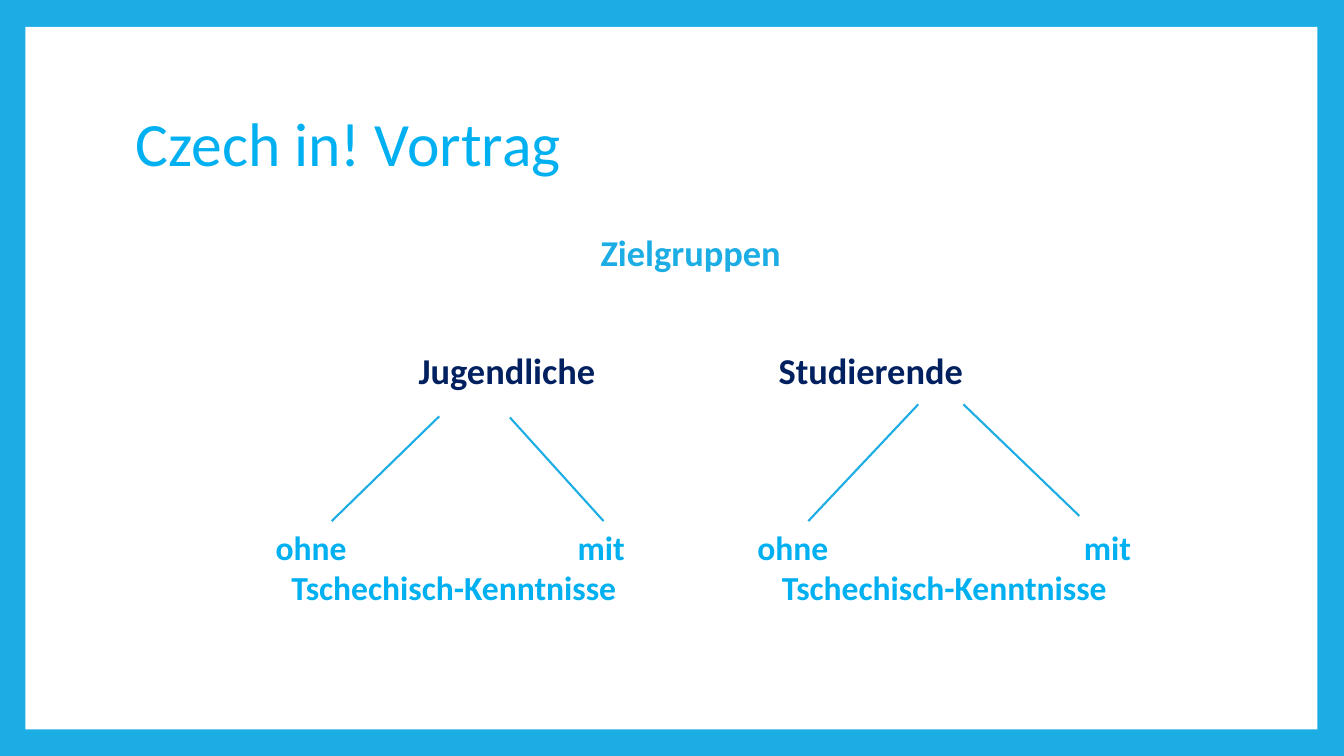
from lxml import etree
from pptx import Presentation
from pptx.dml.color import RGBColor
from pptx.enum.shapes import MSO_CONNECTOR, MSO_SHAPE
from pptx.enum.text import MSO_ANCHOR, PP_ALIGN
from pptx.oxml.ns import qn
from pptx.util import Cm, Pt

LINE = MSO_CONNECTOR.STRAIGHT
RECT = MSO_SHAPE.RECTANGLE
MID = MSO_ANCHOR.MIDDLE
LEFT, CENTER = PP_ALIGN.LEFT, PP_ALIGN.CENTER
BLUE, SKY, NAVY, WHITE = "1CADE4", "00B0F0", "002060", "FFFFFF"


def color(code):
    return RGBColor.from_string(code)


def label(text, mid, y, width, size, code, bold=True, align=CENTER):
    """Add one line of text centred on the point (mid, y), in cm."""
    high = 1.6
    box = slide.shapes.add_textbox(Cm(mid - width / 2), Cm(y - high / 2),
                                   Cm(width), Cm(high))
    frame = box.text_frame
    frame.word_wrap = True
    frame.vertical_anchor = MID
    para = frame.paragraphs[0]
    para.alignment = align
    run = para.add_run()
    run.text = text
    run.font.name = "Calibri"
    run.font.size = Pt(size)
    run.font.bold = bold
    run.font.color.rgb = color(code)


deck = Presentation()
deck.slide_width, deck.slide_height = Cm(33.87), Cm(19.05)
slide = deck.slides.add_slide(deck.slide_layouts[6])

# Blue frame around a white panel
back = slide.background.fill
back.solid()
back.fore_color.rgb = color(BLUE)
panel = slide.shapes.add_shape(RECT, Cm(0.64), Cm(0.68), Cm(32.56), Cm(17.7))
panel.shadow.inherit = False
panel.fill.solid()
panel.fill.fore_color.rgb = color(WHITE)
panel.line.fill.background()

# Title and topic
label("Czech in! Vortrag", 16.89, 3.58, 27.43, 44, SKY, False, LEFT)
label("Zielgruppen", 17.41, 6.34, 8, 26, BLUE)

# Each group: name, its centre, centres of "ohne", "mit" and the skill line
groups = [
    ("Jugendliche", 12.78, 7.84, 15.15, 11.44),
    ("Studierende", 21.95, 19.98, 27.91, 23.8),
]
for name, mid, without, having, skill in groups:
    label(name, mid, 9.32, 8, 26, NAVY)
    label("ohne", without, 13.78, 3, 24, SKY)
    label("mit", having, 13.78, 3, 24, SKY)
    label("Tschechisch-Kenntnisse", skill, 14.79, 10, 24, SKY)

# Branches from each group to its two halves
branches = [
    (11.07, 10.49, 8.36, 13.13),
    (12.85, 10.52, 15.21, 13.13),
    (23.14, 10.19, 20.37, 13.13),
    (24.28, 10.19, 27.2, 13),
]
for ends in branches:
    branch = slide.shapes.add_connector(LINE, *[Cm(end) for end in ends])
    branch.line.color.rgb = color(BLUE)
    branch.line.width = Pt(1.5)
    etree.SubElement(branch._element.spPr, qn("a:effectLst"))

deck.save("out.pptx")
